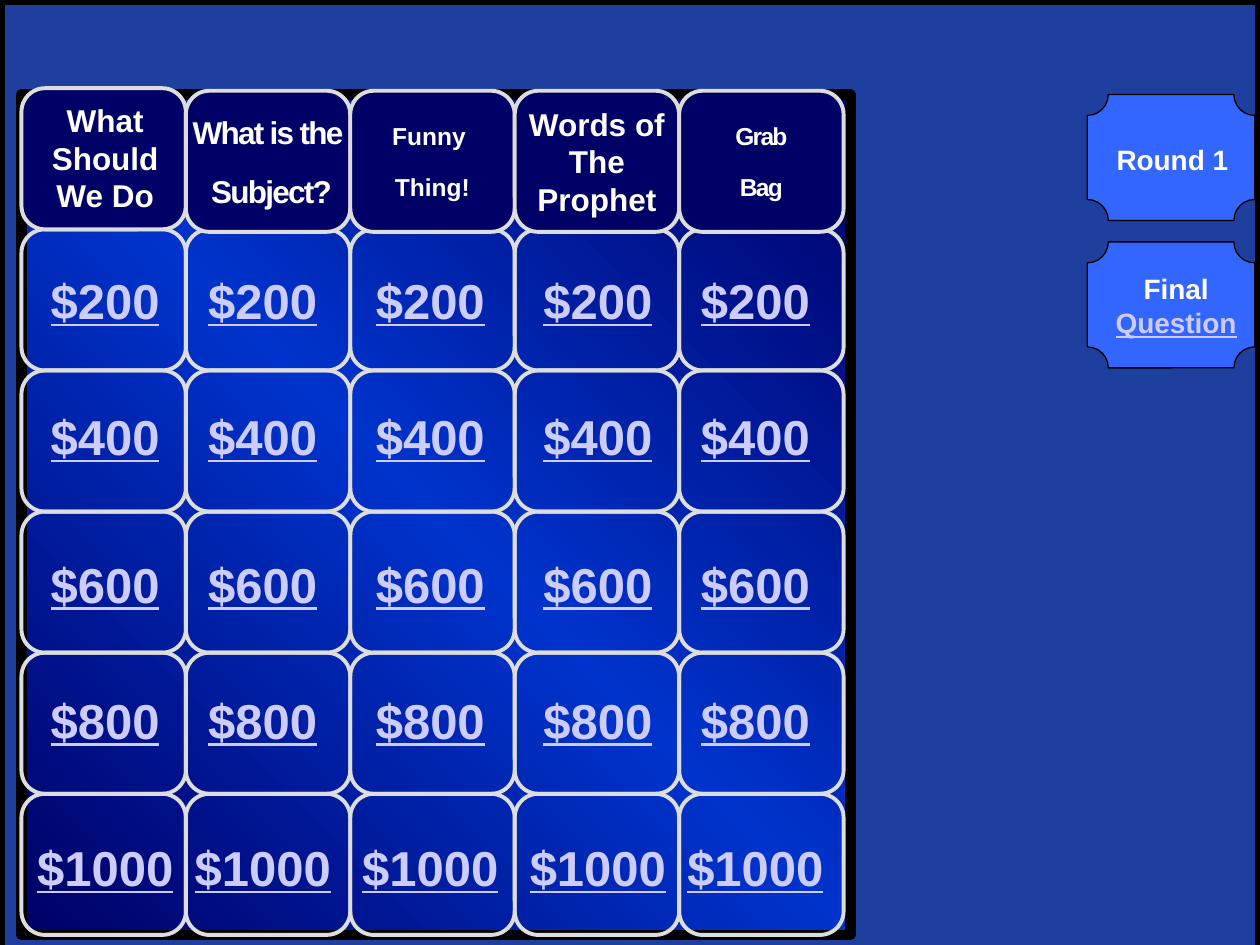
import pptx
import pptx.util
import pptx.dml.color
import pptx.enum.shapes
import pptx.enum.text
import pptx.oxml.ns
from lxml import etree

BLACK = pptx.dml.color.RGBColor(0x00, 0x00, 0x00)
WHITE = pptx.dml.color.RGBColor(0xFF, 0xFF, 0xFF)
NAVY = pptx.dml.color.RGBColor(0x00, 0x00, 0x66)
ROYAL = pptx.dml.color.RGBColor(0x00, 0x33, 0xCC)
BLUE = pptx.dml.color.RGBColor(0x33, 0x66, 0xFF)
SILVER = pptx.dml.color.RGBColor(0xDD, 0xDD, 0xDD)
LAVENDER = pptx.dml.color.RGBColor(0xCC, 0xCC, 0xFF)

SHAPES = pptx.enum.shapes.MSO_SHAPE
LEFT, TOP = 0.17, 0.70
COLUMN_WIDTH, ROW_HEIGHT = 1.305, 1.12
PRICES = ["$200", "$400", "$600", "$800", "$1000"]
PRICE_LEFTS = [0.17, 1.42, 2.75, 4.08, 5.33]
PRICE_TOPS = [2.10, 3.18, 4.35, 5.43, 6.60]
HEADERS = [
    ("What is the\n Subject?", 18, 12, -1),
    ("Funny \nThing!", 14, 12, 0),
    ("Words of\nThe\nProphet", 18, 0, 0),
    ("Grab\nBag", 14, 12, -1),
]


def inches(*lengths):
    return [pptx.util.Inches(length) for length in lengths]


def add_box(slide, kind, box, fill, line, line_width):
    shape = slide.shapes.add_shape(kind, *inches(*box))
    shape.shadow.inherit = False
    if fill is None:
        shape.fill.background()
    else:
        shape.fill.solid()
        shape.fill.fore_color.rgb = fill
    shape.line.color.rgb = line
    shape.line.width = pptx.util.Pt(line_width)
    return shape


def set_opacity(shape, percent):
    color = shape.fill._xPr.find(".//" + pptx.oxml.ns.qn("a:srgbClr"))
    alpha = etree.SubElement(color, pptx.oxml.ns.qn("a:alpha"))
    alpha.set("val", str(percent * 1000))


def set_diagonal_gradient(shape, colors):
    shape.fill.gradient()
    shape.fill.gradient_angle = 45
    stops = shape._element.spPr.find(".//" + pptx.oxml.ns.qn("a:gsLst"))
    for stop in list(stops):
        stops.remove(stop)
    for index, color in enumerate(colors):
        stop = etree.SubElement(stops, pptx.oxml.ns.qn("a:gs"))
        stop.set("pos", str(index * 100000 // (len(colors) - 1)))
        etree.SubElement(stop, pptx.oxml.ns.qn("a:srgbClr")).set("val", str(color))


def format_run(run, size, color, underline=False, spacing=0):
    run.font.name = "Arial"
    run.font.size = pptx.util.Pt(size)
    run.font.bold = True
    run.font.color.rgb = color
    if underline:
        run.font.underline = True
    if spacing:
        run.font._element.set("spc", str(spacing * 100))


def add_label(slide, box, text, size, color=WHITE, underline=False):
    label = slide.shapes.add_textbox(*inches(*box))
    frame = label.text_frame
    frame.word_wrap = True
    frame.auto_size = pptx.enum.text.MSO_AUTO_SIZE.SHAPE_TO_FIT_TEXT
    frame.text = text
    paragraph = frame.paragraphs[0]
    paragraph.alignment = pptx.enum.text.PP_ALIGN.CENTER
    format_run(paragraph.runs[0], size, color, underline)
    return paragraph


def add_cell(slide, column, top, fill=None):
    box = (LEFT + column * COLUMN_WIDTH, top, COLUMN_WIDTH, ROW_HEIGHT)
    return add_box(slide, SHAPES.ROUNDED_RECTANGLE, box, fill, SILVER, 2.25)


def add_header(slide, column, text, size, space_after, spacing):
    frame = add_cell(slide, column, TOP + 0.02, NAVY).text_frame
    frame.word_wrap = False
    frame.vertical_anchor = pptx.enum.text.MSO_ANCHOR.MIDDLE
    frame.text = text
    for paragraph in frame.paragraphs:
        paragraph.alignment = pptx.enum.text.PP_ALIGN.CENTER
        paragraph.space_after = pptx.util.Pt(space_after)
        format_run(paragraph.runs[0], size, WHITE, spacing=spacing)


def add_background(slide):
    add_box(slide, SHAPES.RECTANGLE, (0, 0, 10, 7.5), BLACK, BLACK, 0.75)
    tint = add_box(slide, SHAPES.RECTANGLE, (0, 0, 10, 7.58), BLUE, BLACK, 6)
    set_opacity(tint, 62)
    board = add_box(slide, SHAPES.RECTANGLE, (LEFT, 0.75, 6.58, 6.67), NAVY, BLACK, 6)
    set_diagonal_gradient(board, [NAVY, ROYAL, NAVY])


def add_board(slide):
    for column in range(len(PRICE_LEFTS)):
        for row in range(1, len(PRICES) + 1):
            add_cell(slide, column, TOP + row * ROW_HEIGHT)
    add_cell(slide, 0, TOP, NAVY)
    add_label(slide, (0.25, 0.75, 1.17, 1.01), "What Should We Do", 18)
    for column, header in enumerate(HEADERS, start=1):
        add_header(slide, column, *header)
    for price, top in zip(PRICES, PRICE_TOPS):
        for left in PRICE_LEFTS:
            add_label(slide, (left, top, 1.33, 0.57), price, 28, LAVENDER, True)


def add_round_buttons(slide):
    for top in (0.75, 1.92):
        add_box(slide, SHAPES.PLAQUE, (8.63, top, 1.33, 1), BLUE, BLACK, 0.75)
    add_label(slide, (8.62, 1.08, 1.37, 0.37), "Round 1", 16)
    final = add_label(slide, (8.71, 2.11, 1.25, 0.64), "Final ", 16)
    link = final.add_run()
    link.text = "Question"
    format_run(link, 16, LAVENDER, True)


def main():
    presentation = pptx.Presentation()
    presentation.slide_width, presentation.slide_height = inches(10, 7.5)
    slide = presentation.slides.add_slide(presentation.slide_layouts[6])
    add_background(slide)
    add_board(slide)
    add_round_buttons(slide)
    presentation.save("out.pptx")


if __name__ == "__main__":
    main()
